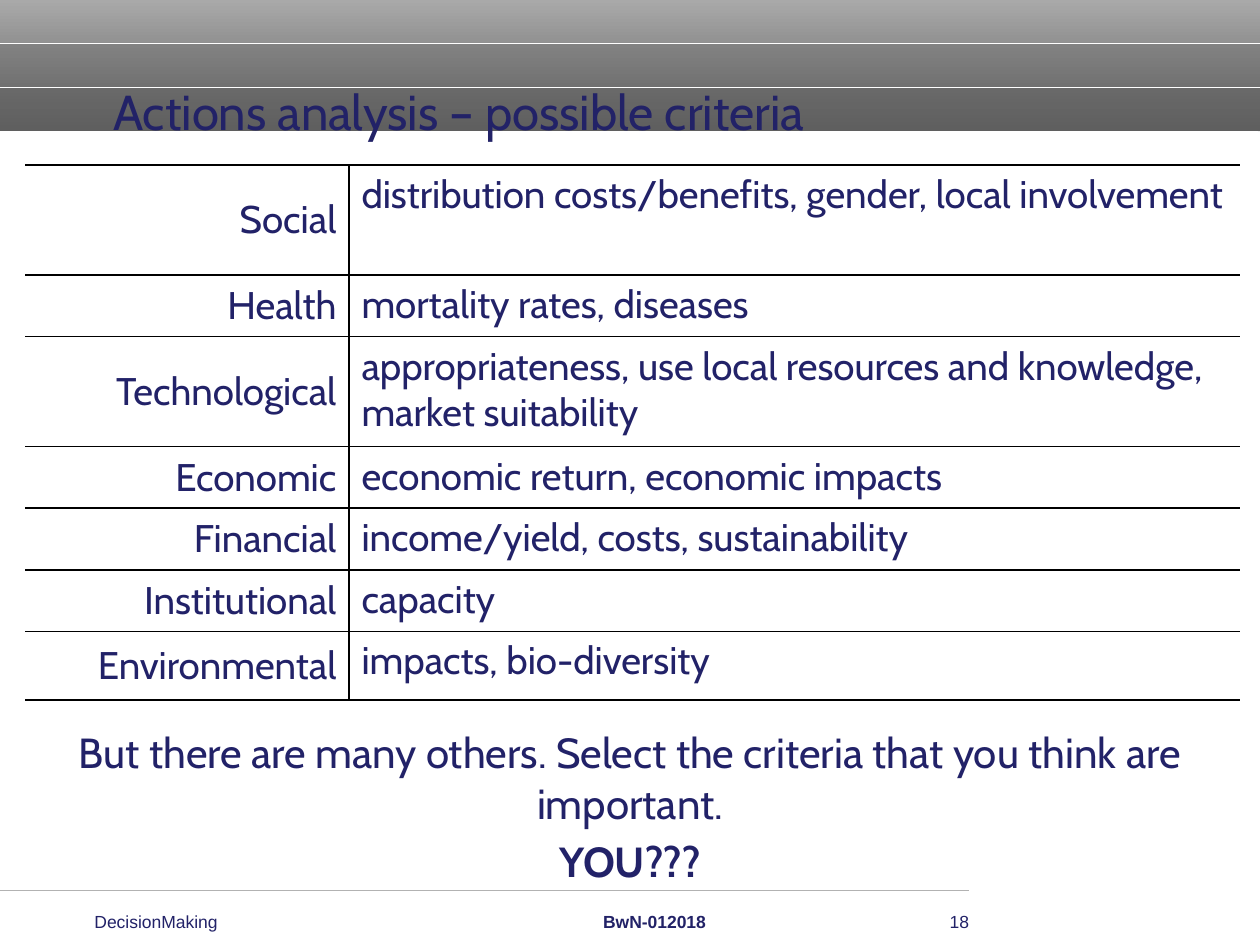
"""Build the slide that lists possible criteria for analysing actions."""
from lxml.etree import SubElement
from pptx import Presentation
from pptx.dml.color import RGBColor
from pptx.enum.shapes import MSO_CONNECTOR, MSO_SHAPE
from pptx.enum.text import MSO_ANCHOR, PP_ALIGN
from pptx.oxml.ns import qn
from pptx.util import Pt

COLORS = {"title": "222267", "text": "222268", "light": "B2B2B2", "dark": "5F5F5F",
          "white": "FFFFFF", "border": "000000"}
WIDTH, HEIGHT = 720, 540
LEFT, CENTER, RIGHT = PP_ALIGN.LEFT, PP_ALIGN.CENTER, PP_ALIGN.RIGHT

CRITERIA = [
    ("Social", "distribution costs/benefits, gender, local involvement", 62.9),
    ("Health", "mortality rates, diseases", 35.2),
    ("Technological", "appropriateness, use local resources and knowledge, market suitability", 62.9),
    ("Economic", "economic return, economic impacts", 35.2),
    ("Financial", "income/yield, costs, sustainability", 35.2),
    ("Institutional", "capacity", 35.2),
    ("Environmental", "impacts, bio-diversity", 39.4),
]
COLUMN_WIDTHS = (185, 509.2)
TABLE_LEFT, TABLE_TOP = 14.4, 94.3

BAND_HEIGHT = 25
BAND_OPACITIES = (10, 35, 60)
LINES = [(0, 75, 718.6, "white"), (0, 509, 553.7, "light"),
         (0, BAND_HEIGHT, WIDTH, "white"), (0, 2 * BAND_HEIGHT, WIDTH, "white")]

TEXTS = [
    ((64.8, 43.2, 490.3, 39.6), (0, 3.6), LEFT, "Cabin", 28, "title",
     [("Actions analysis – possible criteria", False)]),
    ((36, 411.8, 648, 96.5), (7.2, 3.6), CENTER, "Cabin", 24, "text",
     [("But there are many others. Select the criteria that you think are important.", False),
      ("YOU???", True)]),
    ((517, 520.6, 36.7, 25.2), (0, 0), RIGHT, "Arial", 10, "text", [("18", False)]),
    ((54, 520.6, 192.2, 25.2), (0, 0), LEFT, "Arial", 10, "text", [("DecisionMaking", False)]),
    ((317.5, 520.6, 113, 25.2), (0, 0), CENTER, "Arial", 10, "title", [("BwN-012018", True)]),
]


def color(name):
    return RGBColor.from_string(COLORS[name])


def write(paragraph, text, font_name, size, color_name, align, bold=False):
    paragraph.alignment = align
    run = paragraph.add_run()
    run.text = text
    run.font.name = font_name
    run.font.size = Pt(size)
    run.font.bold = bold
    run.font.color.rgb = color(color_name)


def add_rectangle(slide, top, height):
    shape = slide.shapes.add_shape(MSO_SHAPE.RECTANGLE, 0, Pt(top), Pt(WIDTH), Pt(height))
    shape.shadow.inherit = False
    shape.line.fill.background()
    return shape


def add_header(slide):
    fill = add_rectangle(slide, 0, 3 * BAND_HEIGHT).fill
    fill.gradient()
    fill.gradient_angle = 270
    for stop, name in zip(fill.gradient_stops, ("light", "dark")):
        stop.color.rgb = color(name)
    for index, opacity in enumerate(BAND_OPACITIES):
        band = add_rectangle(slide, index * BAND_HEIGHT, BAND_HEIGHT)
        band.fill.solid()
        band.fill.fore_color.rgb = color("dark")
        rgb = next(band.fill._xPr.iter(qn("a:srgbClr")))
        SubElement(rgb, qn("a:alpha"), val=str(opacity * 1000))


def add_line(slide, left, top, right, name):
    line = slide.shapes.add_connector(MSO_CONNECTOR.STRAIGHT, Pt(left), Pt(top), Pt(right), Pt(top))
    line.line.color.rgb = color(name)
    line.line.width = Pt(0.75)
    SubElement(line._element.spPr, qn("a:effectLst"))


def add_text(slide, box, insets, align, font_name, size, color_name, lines):
    frame = slide.shapes.add_textbox(*map(Pt, box)).text_frame
    frame.word_wrap = True
    frame.margin_left = frame.margin_right = Pt(insets[0])
    frame.margin_top = frame.margin_bottom = Pt(insets[1])
    for index, (text, bold) in enumerate(lines):
        paragraph = frame.add_paragraph() if index else frame.paragraphs[0]
        if index:
            paragraph.space_before = Pt(size * 0.2)
        write(paragraph, text, font_name, size, color_name, align, bold)


def set_borders(cell, visible):
    properties = cell._tc.get_or_add_tcPr()
    for side in "LRTB":
        border = SubElement(properties, qn(f"a:ln{side}"), w=str(Pt(1)))
        if side in visible:
            fill = SubElement(border, qn("a:solidFill"))
            SubElement(fill, qn("a:srgbClr"), val=COLORS["border"])
        else:
            SubElement(border, qn("a:noFill"))


def add_criteria(slide):
    height = sum(row_height for *_, row_height in CRITERIA)
    table = slide.shapes.add_table(len(CRITERIA), len(COLUMN_WIDTHS), Pt(TABLE_LEFT), Pt(TABLE_TOP),
                                   Pt(sum(COLUMN_WIDTHS)), Pt(height)).table
    table.first_row = table.horz_banding = False
    for column, width in zip(table.columns, COLUMN_WIDTHS):
        column.width = Pt(width)
    styles = ((RIGHT, MSO_ANCHOR.MIDDLE, "RTB"), (LEFT, MSO_ANCHOR.TOP, "LTB"))
    for row, (*texts, row_height) in zip(table.rows, CRITERIA):
        row.height = Pt(row_height)
        for cell, text, (align, anchor, sides) in zip(row.cells, texts, styles):
            cell.vertical_anchor = anchor
            set_borders(cell, sides)
            cell.fill.background()
            write(cell.text_frame.paragraphs[0], text, "Cabin", 22, "text", align)


def main():
    presentation = Presentation()
    presentation.slide_width, presentation.slide_height = Pt(WIDTH), Pt(HEIGHT)
    slide = presentation.slides.add_slide(presentation.slide_layouts[6])
    add_header(slide)
    for line in LINES:
        add_line(slide, *line)
    add_criteria(slide)
    for text in TEXTS:
        add_text(slide, *text)
    presentation.save("out.pptx")


if __name__ == "__main__":
    main()
